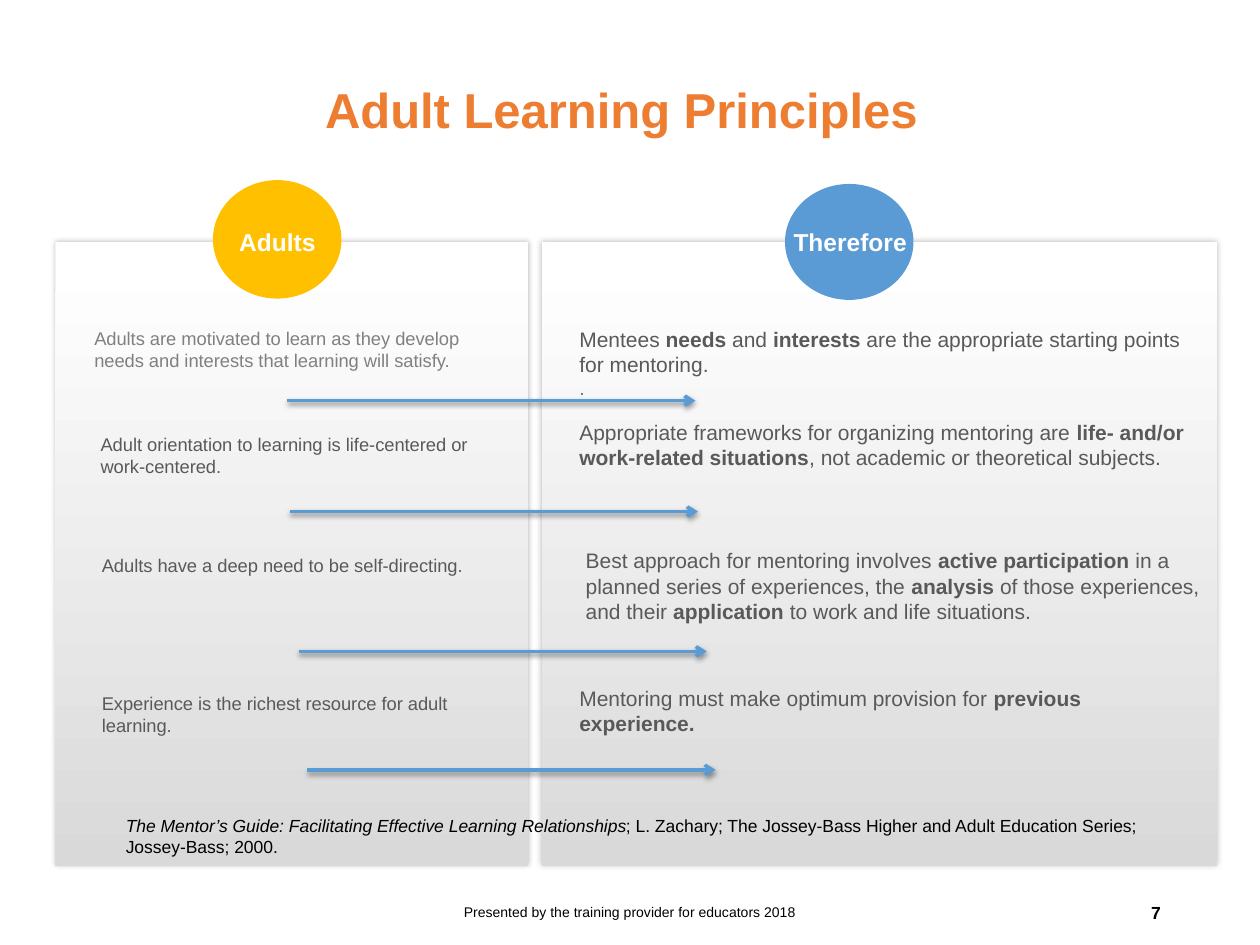
from dataclasses import dataclass

from lxml.etree import SubElement
from pptx import Presentation
from pptx.dml.color import RGBColor
from pptx.enum.shapes import MSO_CONNECTOR, MSO_SHAPE
from pptx.enum.text import MSO_ANCHOR, MSO_AUTO_SIZE, PP_ALIGN
from pptx.oxml.ns import qn
from pptx.util import Inches, Pt

FONT = "Arial"
COLORS = {
    "title": "ED7D31",
    "blue": "5B9BD5",
    "gold": "FFC000",
    "white": "FFFFFF",
    "panel_end": "D9D9D9",
    "body": "595959",
    "muted": "808080",
    "dot": "4472C4",
    "black": "000000",
}


@dataclass
class Box:
    left: float
    top: float
    width: float
    height: float

    def lengths(self) -> list:
        return [Inches(n) for n in (self.left, self.top, self.width, self.height)]


@dataclass
class Column:
    panel: Box
    circle: Box
    color: str
    label: str
    label_box: Box


@dataclass
class Note:
    """Text in which parts between asterisks are emphasised."""
    box: Box
    text: str
    size: float
    color: str = "body"
    emphasis: str = "bold"


@dataclass
class Arrow:
    left: float
    top: float


COLUMNS = [
    Column(Box(4.3, 1.92, 5.36, 4.95), Box(6.23, 1.46, 1.02, 0.92), "blue",
           "Therefore", Box(6.2, 1.75, 1.16, 0.34)),
    Column(Box(0.44, 1.92, 3.75, 4.95), Box(1.69, 1.43, 1.02, 0.94), "gold",
           "Adults", Box(1.8, 1.75, 0.81, 0.34)),
]
PRINCIPLES = [
    Note(Box(0.65, 2.55, 3.27, 0.63),
         "Adults are motivated to learn as they develop needs and interests "
         "that learning will satisfy.", 10.5, "muted"),
    Note(Box(0.7, 3.39, 3.29, 0.45),
         "Adult orientation to learning is life-centered or work-centered.", 10.5),
    Note(Box(0.71, 4.35, 3.31, 0.28),
         "Adults have a deep need to be self-directing.", 10.5),
    Note(Box(0.71, 5.44, 3.29, 0.45),
         "Experience is the richest resource for adult learning.", 10.5),
]
NEEDS = Note(Box(4.5, 2.54, 5.1, 0.88),
             "Mentees *needs* and *interests* are the appropriate starting "
             "points for mentoring.", 12)
CONSEQUENCES = [
    Note(Box(4.5, 3.28, 5.2, 0.68),
         "Appropriate frameworks for organizing mentoring are *life- and/or "
         "work-related situations*, not academic or theoretical subjects.", 12),
    Note(Box(4.55, 4.3, 5.1, 0.89),
         "Best approach for mentoring involves *active participation *in a "
         "planned series of experiences, the *analysis* of those experiences, "
         "and their *application* to work and life situations.", 12),
    Note(Box(4.5, 5.39, 5.1, 0.5),
         "Mentoring must make optimum provision for *previous experience.*", 12),
]
CITATION = Note(Box(0.9, 6.42, 8.7, 0.44),
                "*The Mentor’s Guide: Facilitating Effective Learning "
                "Relationships*; L. Zachary; The Jossey-Bass Higher and Adult "
                "Education Series; Jossey-Bass; 2000.", 10, "black", "italic")
ARROWS = [Arrow(2.28, 3.18), Arrow(2.3, 4.06), Arrow(2.37, 5.17), Arrow(2.44, 6.11)]
ARROW_LENGTH = 3.24


def rgb(name: str) -> RGBColor:
    return RGBColor.from_string(COLORS[name])


def set_font(paragraph, size: float, color: str, bold=None) -> None:
    font = paragraph.font
    font.name, font.size, font.bold = FONT, Pt(size), bold
    font.color.rgb = rgb(color)


def add_shadow(shape, opacity: int, blur: float, distance: float = 0, angle: int = 0) -> None:
    effects = SubElement(shape.element.spPr, qn("a:effectLst"))
    shadow = SubElement(effects, qn("a:outerShdw"), blurRad=str(Pt(blur)),
                        dist=str(Pt(distance)), dir=str(angle * 60000),
                        algn="ctr", rotWithShape="0")
    color = SubElement(shadow, qn("a:srgbClr"), val=COLORS["black"])
    SubElement(color, qn("a:alpha"), val=str(opacity * 1000))


def add_panel(slide, box: Box) -> None:
    panel = slide.shapes.add_shape(MSO_SHAPE.ROUNDED_RECTANGLE, *box.lengths())
    panel.adjustments[0] = 0
    panel.fill.gradient()
    panel.fill.gradient_angle = 270
    stops = ((0.03, "white"), (1, "panel_end"))
    for stop, (position, color) in zip(panel.fill.gradient_stops, stops):
        stop.position = position
        stop.color.rgb = rgb(color)
    panel.line.fill.background()
    add_shadow(panel, 25, 3)


def add_circle(slide, box: Box, color: str) -> None:
    circle = slide.shapes.add_shape(MSO_SHAPE.OVAL, *box.lengths())
    circle.shadow.inherit = False
    circle.fill.solid()
    circle.fill.fore_color.rgb = rgb(color)
    circle.line.fill.background()


def add_text(slide, box: Box, text: str, size: float, color: str, bold=None):
    frame = slide.shapes.add_textbox(*box.lengths()).text_frame
    frame.word_wrap = True
    paragraph = frame.paragraphs[0]
    paragraph.text = text
    set_font(paragraph, size, color, bold)
    return frame


def add_note(slide, note: Note):
    frame = add_text(slide, note.box, "", note.size, note.color)
    frame.auto_size = MSO_AUTO_SIZE.SHAPE_TO_FIT_TEXT
    for index, part in enumerate(note.text.split("*")):
        if part:
            run = frame.paragraphs[0].add_run()
            run.text = part
            if index % 2:
                setattr(run.font, note.emphasis, True)
    return frame


def add_footer(slide, box: Box, text: str, size: float, alignment, bold=None) -> None:
    frame = add_text(slide, box, text, size, "black", bold)
    frame.vertical_anchor = MSO_ANCHOR.MIDDLE
    frame.paragraphs[0].alignment = alignment


def add_arrow(slide, arrow: Arrow) -> None:
    top = Inches(arrow.top)
    connector = slide.shapes.add_connector(
        MSO_CONNECTOR.STRAIGHT, Inches(arrow.left), top,
        Inches(arrow.left + ARROW_LENGTH), top)
    connector.line.color.rgb = rgb("blue")
    connector.line.width = Pt(2)
    SubElement(connector.element.spPr.find(qn("a:ln")), qn("a:tailEnd"), type="arrow")
    add_shadow(connector, 38, 3.1, 1.6, 90)


def set_title(slide, box: Box, text: str) -> None:
    title = slide.shapes.title
    title.left, title.top, title.width, title.height = box.lengths()
    frame = title.text_frame
    frame.text = text
    frame.auto_size = MSO_AUTO_SIZE.NONE
    frame.vertical_anchor = MSO_ANCHOR.MIDDLE
    frame.margin_top = frame.margin_bottom = Inches(0.1)
    paragraph = frame.paragraphs[0]
    paragraph.alignment = PP_ALIGN.LEFT
    paragraph.line_spacing = 0.9
    set_font(paragraph, 28, "title", True)


def main() -> None:
    presentation = Presentation()
    presentation.slide_width, presentation.slide_height = Inches(10), Inches(7.5)
    slide = presentation.slides.add_slide(presentation.slide_layouts[5])
    set_title(slide, Box(2.48, 0.5, 5.12, 0.78), "Adult Learning Principles")

    for column in COLUMNS:
        add_panel(slide, column.panel)
    for column in COLUMNS:
        add_circle(slide, column.circle, column.color)
        label = add_text(slide, column.label_box, column.label, 14, "white", True)
        label.word_wrap = False
        label.auto_size = MSO_AUTO_SIZE.SHAPE_TO_FIT_TEXT

    dot = add_note(slide, NEEDS).add_paragraph()
    dot.text = "."
    set_font(dot, 11, "dot")
    for note in [*PRINCIPLES, *CONSEQUENCES, CITATION]:
        add_note(slide, note)
    for arrow in ARROWS:
        add_arrow(slide, arrow)

    add_footer(slide, Box(3.31, 7.04, 3.38, 0.4),
               "Presented by the training provider for educators 2018", 8, PP_ALIGN.CENTER)
    add_footer(slide, Box(7.06, 7.04, 2.25, 0.4), "7", 10, PP_ALIGN.RIGHT, True)
    presentation.save("out.pptx")


if __name__ == "__main__":
    main()
